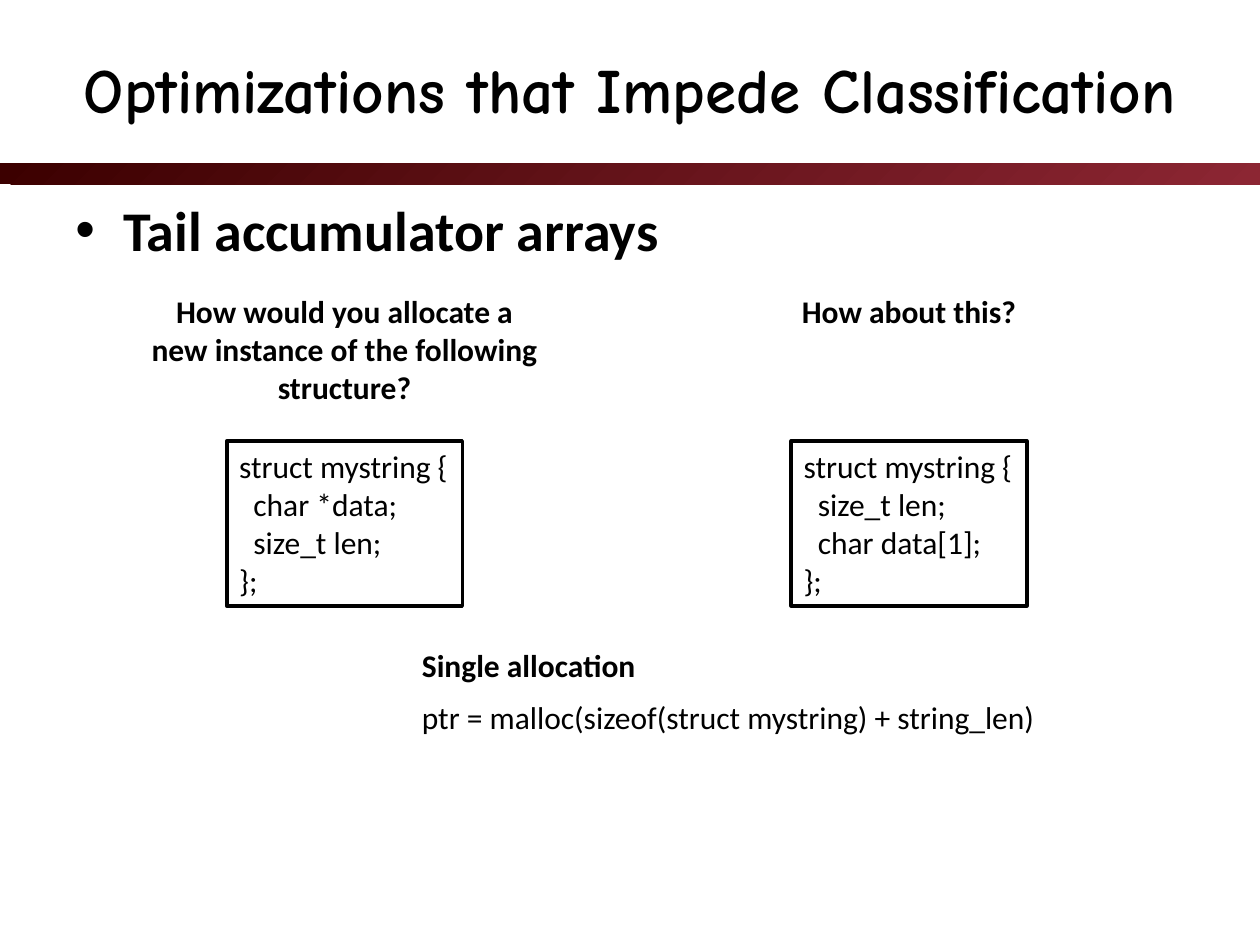
from lxml import etree
from pptx import Presentation
from pptx.dml.color import RGBColor
from pptx.enum import shapes, text
from pptx.oxml.ns import qn
from pptx.util import Inches, Pt

THEME = {
    "ink": RGBColor.from_string("000000"),
    "paper": RGBColor.from_string("FFFFFF"),
    "bar": [RGBColor.from_string(c) for c in ("3C0000", "8C2633")],
    "title_font": "Comic Neue",
    "body_font": "Calibri",
    "title": 36,
    "bullet": 32,
    "text": 18,
}

TITLE = "Optimizations that Impede Classification"
BULLET = "Tail accumulator arrays"
COLUMNS = [
    ("How would you allocate a new instance of the following structure?", 1.01,
     ["struct mystring {", "  char *data;", "  size_t len;", "};"]),
    ("How about this?", 0.4,
     ["struct mystring {", "  size_t len;", "  char data[1];", "};"]),
]
ALLOCATION = [
    ("Single allocation", 1.91, True),
    ("ptr = malloc(sizeof(struct mystring) + string_len)", 5.2, False),
]

SLIDE_W, SLIDE_H = 10, 7.5
BAR_H, BAR_MID = 0.17, 1.38
COLUMN_LEFT, COLUMN_STEP, QUESTION_W = 1.07, 4.48, 3.33
QUESTION_TOP, CODE_TOP, CODE_W, CODE_H = 2.27, 3.5, 1.87, 1.31
ALLOCATION_LEFT, ALLOCATION_TOP, LINE_STEP, LINE_H = 3.25, 5.08, 0.41, 0.4


def add_text(slide, lines, box, size=THEME["text"], font=THEME["body_font"],
             bold=False, align=text.PP_ALIGN.LEFT, anchor=text.MSO_ANCHOR.TOP,
             wrap=True, grow=True, bullet=False, framed=False):
    at = [Inches(v) for v in box]
    if framed:
        sp = slide.shapes.add_shape(shapes.MSO_SHAPE.RECTANGLE, *at)
        sp.shadow.inherit = False
        sp.fill.solid()
        sp.fill.fore_color.rgb = THEME["paper"]
        sp.line.color.rgb = THEME["ink"]
        sp.line.width = Pt(2)
    else:
        sp = slide.shapes.add_textbox(*at)
    tf = sp.text_frame
    tf.word_wrap = wrap
    tf.vertical_anchor = anchor
    tf.auto_size = (text.MSO_AUTO_SIZE.SHAPE_TO_FIT_TEXT if grow
                    else text.MSO_AUTO_SIZE.NONE)
    for i, line in enumerate(lines):
        p = tf.add_paragraph() if i else tf.paragraphs[0]
        p.alignment = align
        if bullet:
            pPr = p._p.get_or_add_pPr()
            pPr.set("marL", str(Inches(0.38)))
            pPr.set("indent", str(-Inches(0.38)))
            etree.SubElement(pPr, qn("a:buFont")).set("typeface", "Arial")
            etree.SubElement(pPr, qn("a:buChar")).set("char", "•")
        r = p.add_run()
        r.text = line
        r.font.size = Pt(size)
        r.font.name = font
        r.font.bold = bold
        r.font.color.rgb = THEME["ink"]
    return sp


def add_bar(slide):
    sp = slide.shapes.add_shape(
        shapes.MSO_SHAPE.RECTANGLE,
        Inches((SLIDE_W - BAR_H) / 2), Inches(BAR_MID - SLIDE_W / 2),
        Inches(BAR_H), Inches(SLIDE_W))
    sp.rotation = 90
    sp.shadow.inherit = False
    sp.line.fill.background()
    sp.fill.gradient()
    sp.fill.gradient_angle = 45
    for stop, color in zip(sp.fill.gradient_stops, THEME["bar"]):
        stop.color.rgb = color


def main():
    prs = Presentation()
    prs.slide_width, prs.slide_height = Inches(SLIDE_W), Inches(SLIDE_H)
    s = prs.slides.add_slide(prs.slide_layouts[6])

    add_bar(s)
    add_text(s, [TITLE], (0.5, 0.15, 9, 1.1), size=THEME["title"],
             font=THEME["title_font"], bold=True, grow=False,
             align=text.PP_ALIGN.CENTER, anchor=text.MSO_ANCHOR.MIDDLE)
    add_text(s, [BULLET], (0.5, 1.5, 9, 5.4), size=THEME["bullet"],
             bold=True, grow=False, bullet=True)

    for i, (question, height, code) in enumerate(COLUMNS):
        left = COLUMN_LEFT + i * COLUMN_STEP
        code_left = left + (QUESTION_W - CODE_W) / 2
        add_text(s, code, (code_left, CODE_TOP, CODE_W, CODE_H),
                 wrap=False, framed=True)
        add_text(s, [question], (left, QUESTION_TOP, QUESTION_W, height),
                 bold=True, align=text.PP_ALIGN.CENTER)

    for i, (line, width, bold) in enumerate(ALLOCATION):
        top = ALLOCATION_TOP + i * LINE_STEP
        add_text(s, [line], (ALLOCATION_LEFT, top, width, LINE_H),
                 bold=bold, wrap=False)

    prs.save("out.pptx")


if __name__ == "__main__":
    main()
